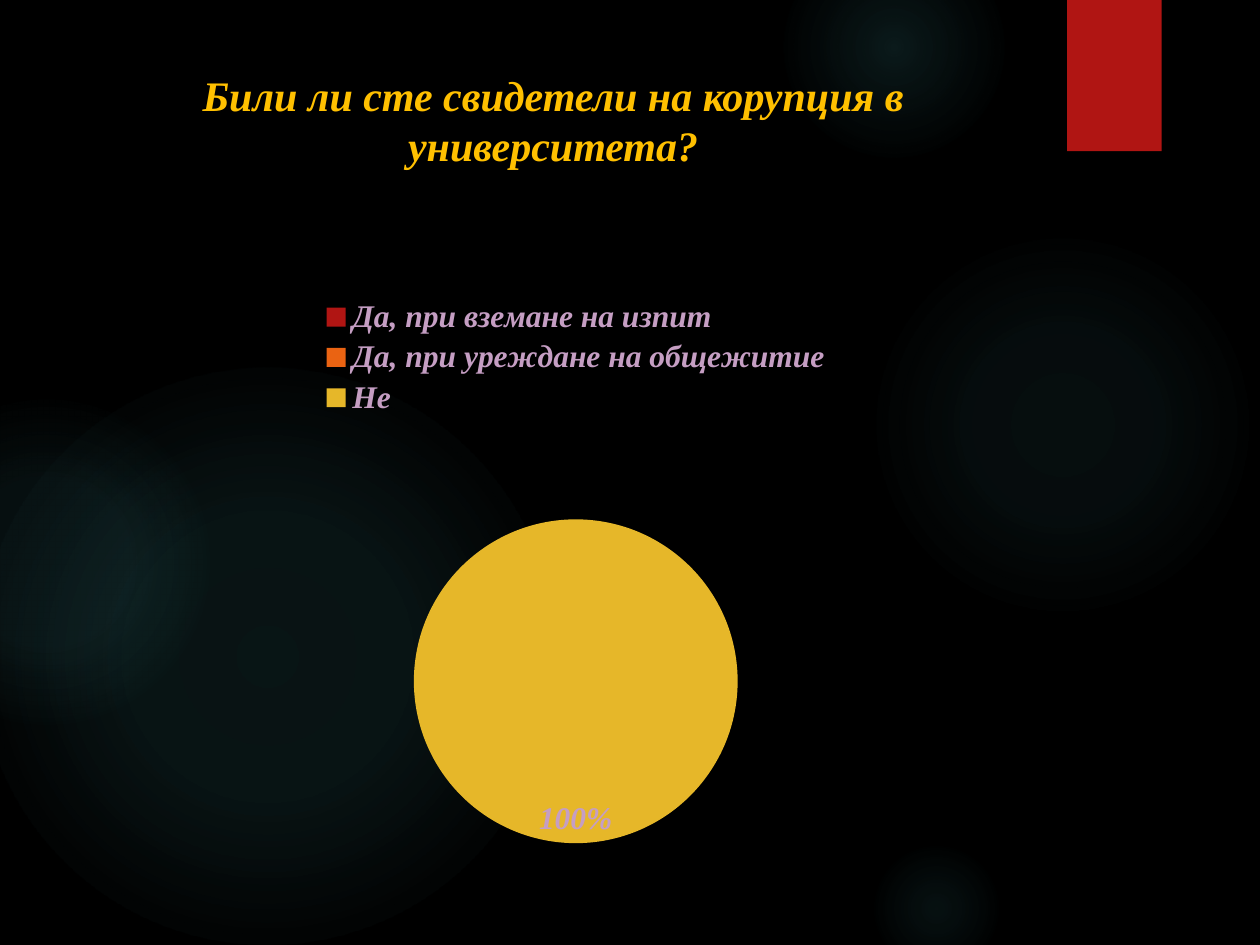
"""Build a survey slide with a pie chart on a dark, softly lit background."""
from lxml.etree import SubElement
from pptx import Presentation
from pptx.chart.data import CategoryChartData
from pptx.dml.color import RGBColor
from pptx.enum.chart import XL_CHART_TYPE, XL_LABEL_POSITION, XL_LEGEND_POSITION
from pptx.enum.shapes import MSO_SHAPE
from pptx.enum.text import MSO_ANCHOR, PP_ALIGN
from pptx.oxml import parse_xml
from pptx.oxml.ns import nsdecls, qn
from pptx.util import Inches, Pt

BLACK = RGBColor(0x00, 0x00, 0x00)
WHITE = RGBColor(0xFF, 0xFF, 0xFF)
TEAL = RGBColor(0x50, 0xB9, 0xC1)
RED = RGBColor(0xB0, 0x15, 0x13)
ORANGE = RGBColor(0xEA, 0x63, 0x12)
YELLOW = RGBColor(0xE6, 0xB7, 0x29)
GOLD = RGBColor(0xFF, 0xC0, 0x00)
LILAC = RGBColor(0xC5, 0x9E, 0xC3)


def style_font(font, size, color):
    font.name = "Times New Roman"
    font.size = Pt(size)
    font.bold = True
    font.italic = True
    font.color.rgb = color


def set_layout(element, x, y, width, height, inner=False):
    for old in element.findall(qn("c:layout")):
        element.remove(old)
    layout = parse_xml(f"<c:layout {nsdecls('c')}><c:manualLayout/></c:layout>")
    settings = {"xMode": "edge", "yMode": "edge", "x": x, "y": y, "w": width, "h": height}
    if inner:
        settings = {"layoutTarget": "inner", **settings}
    for name, value in settings.items():
        SubElement(layout[0], qn(f"c:{name}")).set("val", str(value))
    element.insert(0 if inner else 1, layout)


deck = Presentation()
deck.slide_width = Inches(10)
deck.slide_height = Inches(7.5)
page = deck.slides.add_slide(deck.slide_layouts[6])
page.background.fill.solid()
page.background.fill.fore_color.rgb = BLACK

glows = [
    (6.89, 1.83, 3.08, 7, 6, 69),
    (6.22, -0.5, 1.75, 14, 7, 73),
    (6.89, 6.67, 1.08, 9, 5, 66),
    (-0.17, 2.92, 4.58, 11, 10, 75),
    (-0.92, 3.17, 2.58, 8, 8, 72),
]
for left, top, size, center_alpha, middle_alpha, edge in glows:
    glow = page.shapes.add_shape(
        MSO_SHAPE.OVAL, Inches(left), Inches(top), Inches(size), Inches(size))
    glow.shadow.inherit = False
    glow.line.fill.background()
    stops = "".join(
        f'<a:gs pos="{position * 1000}"><a:srgbClr val="{TEAL}">'
        f'<a:alpha val="{alpha * 1000}"/></a:srgbClr></a:gs>'
        for position, alpha in [(0, center_alpha), (36, middle_alpha), (edge, 0)])
    gradient = parse_xml(
        f'<a:gradFill {nsdecls("a")}><a:gsLst>{stops}</a:gsLst><a:path path="circle">'
        '<a:fillToRect l="50000" t="50000" r="50000" b="50000"/></a:path></a:gradFill>')
    glow._element.spPr.find(qn("a:prstGeom")).addnext(gradient)

ribbon = page.shapes.add_shape(
    MSO_SHAPE.RECTANGLE, Inches(8.47), Inches(0), Inches(0.75), Inches(1.2))
ribbon.shadow.inherit = False
ribbon.fill.solid()
ribbon.fill.fore_color.rgb = RED
ribbon.line.fill.background()
ribbon._element.spPr.find(qn("a:effectLst")).append(parse_xml(
    f'<a:outerShdw {nsdecls("a")} blurRad="{Pt(3)}" dist="{Pt(2)}" dir="5400000">'
    f'<a:srgbClr val="{BLACK}"><a:alpha val="45000"/></a:srgbClr></a:outerShdw>'))

title = page.shapes.add_textbox(Inches(0.53), Inches(0.5), Inches(7.72), Inches(1.53))
title.text_frame.word_wrap = True
title.text_frame.vertical_anchor = MSO_ANCHOR.TOP
para = title.text_frame.paragraphs[0]
para.text = "Били ли сте свидетели на корупция в университета?"
para.alignment = PP_ALIGN.CENTER
style_font(para.font, 24, GOLD)

survey = CategoryChartData()
survey.categories = ["Да, при вземане на изпит", "Да, при уреждане на общежитие", "Не"]
survey.add_series("Series 1", (0, 0, 100))
chart = page.shapes.add_chart(
    XL_CHART_TYPE.PIE, Inches(0.9), Inches(2.24), Inches(7.34), Inches(4.59), survey).chart
chart.has_title = False
chart.font.name = "TeX Gyre Adventor"
chart.font.size = Pt(18)
chart.font.color.rgb = WHITE

chart.has_legend = True
chart.legend.position = XL_LEGEND_POSITION.TOP
chart.legend.include_in_layout = False
style_font(chart.legend.font, 18, LILAC)
set_layout(chart.legend._element, 0.22, 0.02, 0.56, 0.22)

plot = chart.plots[0]
plot.vary_by_categories = True
set_layout(plot._element.getparent(), 0.28, 0.27, 0.44, 0.7, inner=True)
series = plot.series[0]
for index, color in enumerate([RED, ORANGE, YELLOW]):
    slice_fill = series.points[index].format.fill
    slice_fill.solid()
    slice_fill.fore_color.rgb = color
explosion = parse_xml(f'<c:explosion {nsdecls("c")} val="25"/>')
series._element.find(qn("c:dPt")).addprevious(explosion)

labels = series.data_labels
labels.show_percentage = True
labels.show_value = False
labels.number_format = "0%;;"
labels.number_format_is_linked = False
labels.position = XL_LABEL_POSITION.INSIDE_END
style_font(labels.font, 18, LILAC)

deck.save("out.pptx")
